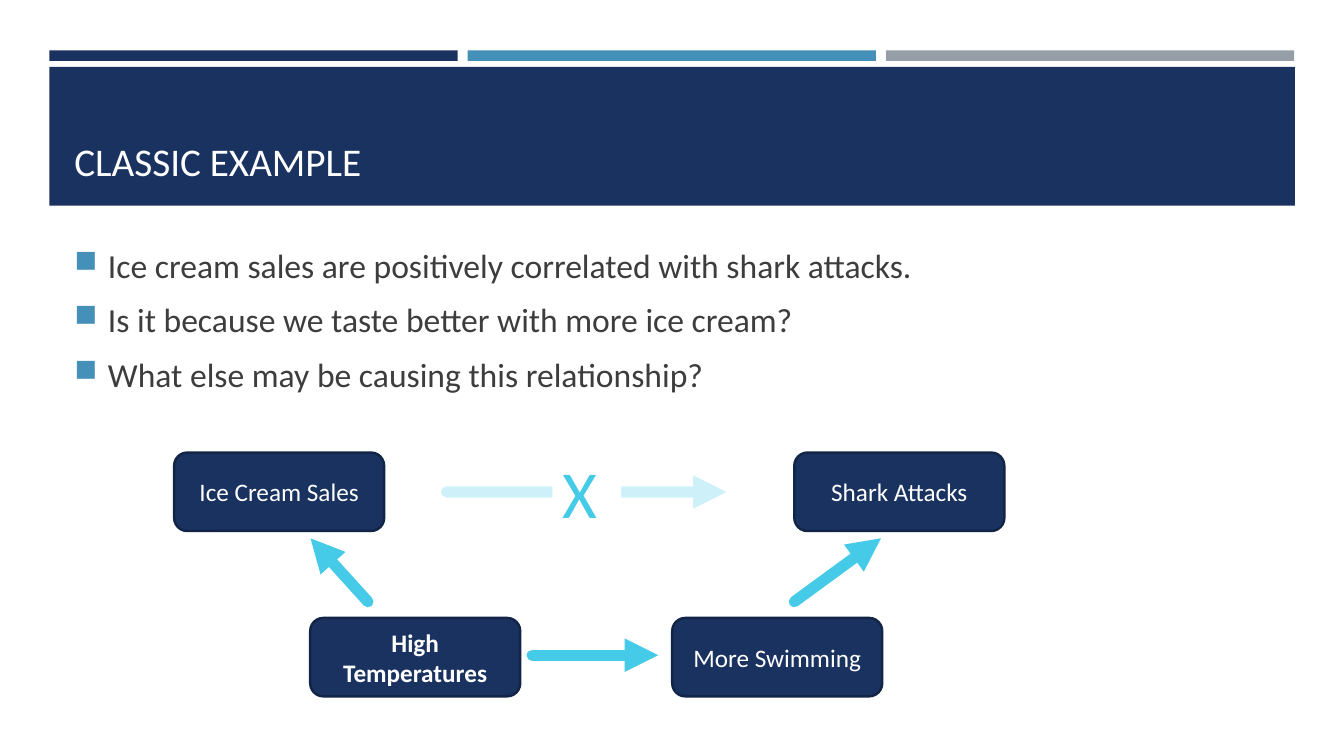
"""Builds the slide on ice cream sales, shark attacks and their common cause."""
from dataclasses import dataclass

import pptx
import pptx.dml.color
import pptx.enum.shapes
import pptx.enum.text
import pptx.oxml
import pptx.oxml.ns
import pptx.util
from lxml import etree

Pt = pptx.util.Pt
SHAPE = pptx.enum.shapes.MSO_SHAPE
ANCHOR = pptx.enum.text.MSO_ANCHOR
ALIGN = pptx.enum.text.PP_ALIGN


@dataclass(frozen=True)
class Theme:
    """Colours, font and type sizes of the slide."""
    navy: str = "1A3260"
    edge: str = "132547"
    blue: str = "4590B8"
    grey: str = "969FA7"
    cyan: str = "45CBE8"
    ink: str = "3D3D3D"
    white: str = "FFFFFF"
    font: str = "Calibri"
    title: int = 28
    body: int = 24
    label: int = 18
    cross: int = 48


class Deck:
    """Draws themed elements on the current slide."""

    def __init__(self, prs, theme):
        """Adds a blank slide to the presentation."""
        self.theme = theme
        self.s = prs.slides.add_slide(prs.slide_layouts[6])

    def rgb(self, colour):
        """Returns a colour object for a hex string."""
        return pptx.dml.color.RGBColor.from_string(colour)

    def style(self, p, text, size, colour, bold=False):
        """Fills a paragraph with styled text."""
        p.text = text
        p.font.name = self.theme.font
        p.font.size = Pt(size)
        p.font.bold = bold
        p.font.color.rgb = self.rgb(colour)

    def block(self, x, y, w, h, colour, kind=SHAPE.RECTANGLE):
        """Adds a plain filled shape."""
        sp = self.s.shapes.add_shape(kind, Pt(x), Pt(y), Pt(w), Pt(h))
        sp.shadow.inherit = False
        sp.fill.solid()
        sp.fill.fore_color.rgb = self.rgb(colour)
        sp.line.fill.background()
        return sp

    def node(self, x, y, text, bold=False):
        """Adds a rounded box of the causal diagram."""
        sp = self.block(x, y, 150, 56, self.theme.navy, SHAPE.ROUNDED_RECTANGLE)
        sp.line.color.rgb = self.rgb(self.theme.edge)
        sp.line.width = Pt(1.75)
        tf = sp.text_frame
        tf.word_wrap = True
        tf.vertical_anchor = ANCHOR.MIDDLE
        p = tf.paragraphs[0]
        p.alignment = ALIGN.CENTER
        self.style(p, text, self.theme.label, self.theme.white, bold)

    def text(self, x, y, w, h, lines, size, colour, anchor=ANCHOR.TOP):
        """Adds a wrapping text box with one paragraph per line."""
        sp = self.s.shapes.add_textbox(Pt(x), Pt(y), Pt(w), Pt(h))
        tf = sp.text_frame
        tf.word_wrap = True
        tf.vertical_anchor = anchor
        for i, line in enumerate(lines):
            p = tf.add_paragraph() if i else tf.paragraphs[0]
            self.style(p, line, size, colour)
        return sp

    def bullets(self, x, y, w, h, lines):
        """Adds a list with square bullets."""
        sp = self.text(x, y, w, h, lines, self.theme.body, self.theme.ink)
        qn = pptx.oxml.ns.qn
        for p in sp.text_frame.paragraphs:
            p.space_before = Pt(4)
            p.space_after = Pt(6)
            pPr = p._p.get_or_add_pPr()
            pPr.set("marL", str(Pt(24)))
            pPr.set("indent", str(-Pt(24)))
            marks = [etree.Element(qn(tag)) for tag in ("a:buClr", "a:buSzPct", "a:buChar")]
            etree.SubElement(marks[0], qn("a:srgbClr"), val=self.theme.blue)
            marks[1].set("val", "92000")
            marks[2].set("char", "■")
            at = list(pPr).index(pPr.find(qn("a:defRPr")))
            pPr[at:at] = marks

    def cross(self, x, y, w, h):
        """Adds the X that breaks the false link."""
        sp = self.text(x, y, w, h, ["X"], self.theme.cross, self.theme.cyan)
        sp.fill.solid()
        sp.fill.fore_color.rgb = self.rgb(self.theme.white)
        sp.text_frame.word_wrap = False
        sp.text_frame.auto_size = pptx.enum.text.MSO_AUTO_SIZE.SHAPE_TO_FIT_TEXT

    def arrow(self, x1, y1, x2, y2, alpha=None):
        """Adds a thick round-capped arrow."""
        qn = pptx.oxml.ns.qn
        kind = pptx.enum.shapes.MSO_CONNECTOR.STRAIGHT
        c = self.s.shapes.add_connector(kind, Pt(x1), Pt(y1), Pt(x2), Pt(y2))
        c.line.color.rgb = self.rgb(self.theme.cyan)
        c.line.width = Pt(8)
        ln = c.line._get_or_add_ln()
        ln.set("cap", "rnd")
        if alpha:
            etree.SubElement(ln.find(".//" + qn("a:srgbClr")), qn("a:alpha"), val=str(alpha * 1000))
        etree.SubElement(ln, qn("a:tailEnd"), type="triangle")
        etree.SubElement(c._element.spPr, qn("a:effectLst"))


def main():
    """Builds and saves the slide."""
    prs = pptx.Presentation()
    prs.slide_width, prs.slide_height = Pt(960), Pt(540)
    theme = Theme()
    deck = Deck(prs, theme)

    for i, colour in enumerate((theme.navy, theme.blue, theme.grey)):
        deck.block(35.3 + 298.8 * i, 36, 291.6, 7.5, colour)
    deck.block(35.3, 47.8, 889.6, 99.2, theme.navy)
    deck.text(46, 57.6, 868, 77.8, ["CLASSIC EXAMPLE"], theme.title, theme.white, ANCHOR.BOTTOM)
    deck.bullets(46, 171.4, 868, 289.4, [
        "Ice cream sales are positively correlated with shark attacks.",
        "Is it because we taste better with more ice cream?",
        "What else may be causing this relationship?",
    ])

    top, bottom = 323.3, 441.4
    deck.node(124.4, top, "Ice Cream Sales")
    deck.node(567.4, top, "Shark Attacks")
    deck.arrow(319, 351.4, 519, 351.4, alpha=25)
    deck.cross(394.6, 319, 49, 65.5)
    deck.node(221.6, bottom, "High Temperatures", bold=True)
    deck.node(480.2, bottom, "More Swimming")
    deck.arrow(262.8, 429.8, 221.8, 384.5)
    deck.arrow(380.2, 468, 470.2, 468)
    deck.arrow(567.4, 429.8, 629.3, 384.5)

    prs.save("out.pptx")


if __name__ == "__main__":
    main()
